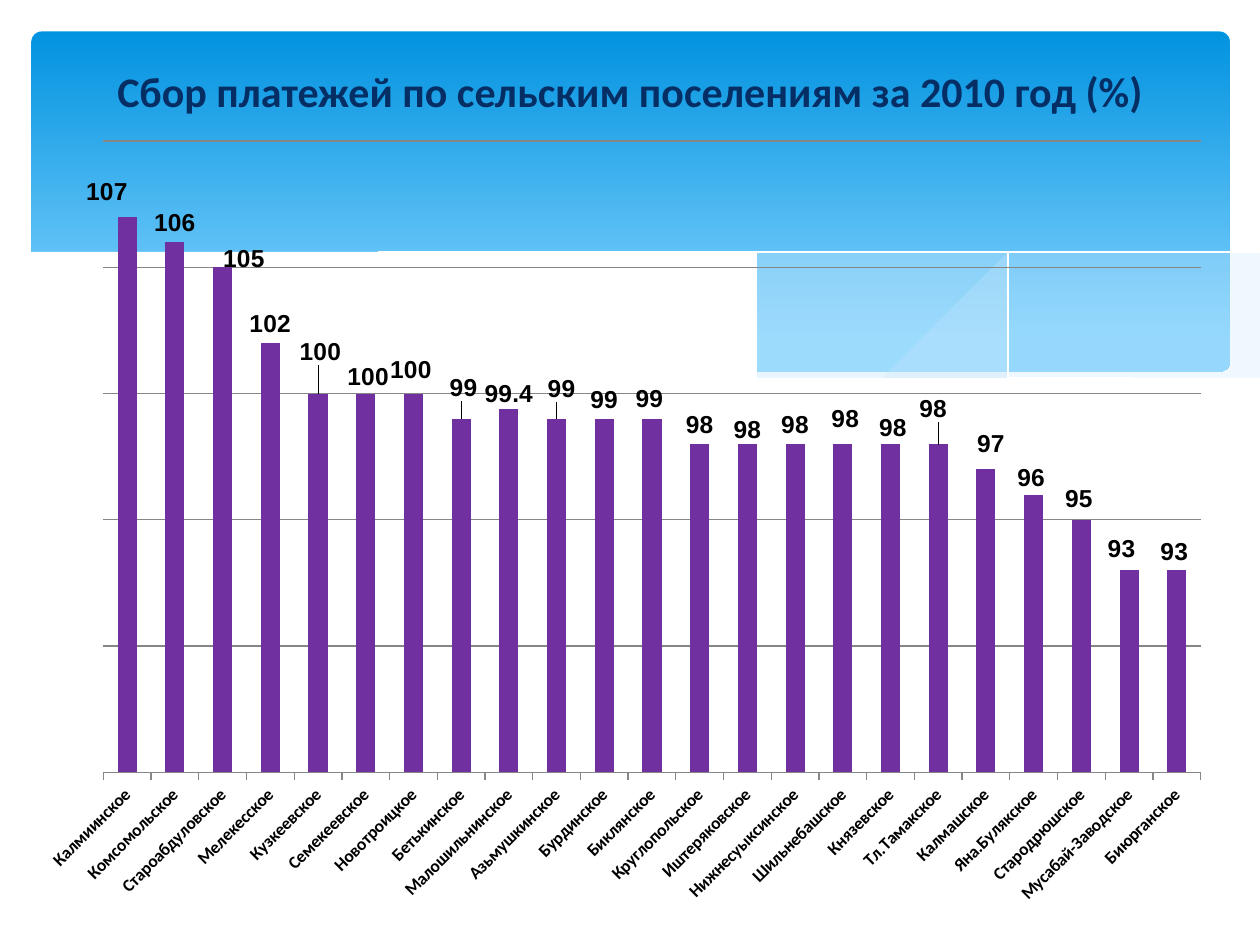
"""Build a slide with a column chart of payment collection by rural settlement."""
from lxml.etree import SubElement
from pptx import Presentation
from pptx.chart.data import CategoryChartData
from pptx.dml.color import RGBColor
from pptx.enum.chart import XL_CHART_TYPE, XL_LABEL_POSITION, XL_TICK_LABEL_POSITION, XL_TICK_MARK
from pptx.enum.shapes import MSO_SHAPE
from pptx.enum.text import MSO_ANCHOR, MSO_AUTO_SIZE, PP_ALIGN
from pptx.oxml import parse_xml
from pptx.oxml.ns import nsdecls, qn
from pptx.util import Inches, Pt

TITLE = "Сбор платежей по сельским поселениям за 2010 год (%)"
COLLECTION = [
    ("Калмиинское", 107), ("Комсомольское", 106), ("Староабдуловское", 105),
    ("Мелекесское", 102), ("Кузкеевское", 100), ("Семекеевское", 100),
    ("Новотроицкое", 100), ("Бетькинское", 99), ("Малошильнинское", 99.4),
    ("Азьмушкинское", 99), ("Бурдинское", 99), ("Биклянское", 99),
    ("Круглопольское", 98), ("Иштеряковское", 98), ("Нижнесуыксинское", 98),
    ("Шильнебашское", 98), ("Князевское", 98), ("Тл.Тамакское", 98),
    ("Калмашское", 97), ("Яна.Булякское", 96), ("Стародрюшское", 95),
    ("Мусабай-Заводское", 93), ("Биюрганское", 93),
]
LABEL_SHIFTS = {
    0: (-0.16, -0.05), 2: (0.17, 0.08), 4: (0.02, -0.18), 5: (0.02, 0.02),
    6: (-0.02, -0.04), 7: (0.02, -0.1), 8: (0, 0.03), 9: (0.04, -0.09),
    11: (-0.02, -0.01), 13: (0, 0.04), 15: (0.02, -0.05), 16: (0.02, 0.02),
    17: (-0.04, -0.13), 18: (0.04, -0.05), 19: (-0.02, 0.02), 20: (-0.02, -0.02),
    21: (-0.06, -0.02), 22: (-0.02, 0),
}
COLORS = {"sky": "0293E0", "haze": "83D3FE", "wave": "C6E7FC", "white": "FFFFFF",
          "title": "052E65", "bar": "7030A0", "text": "000000", "grid": "868686"}
CHART_BOX = (0.2, 0.99, 9.53, 6.3)
PLOT_BOX = (0.82, 1.12, 8.71, 5.01)

RIGHT_WAVE = [
    [(9.76, 1.99), (9.35, 2.07), (8.91, 2.16), (8.32, 2.3), (7.53, 2.48), (6.61, 2.65)],
    [(6.61, 2.65), (7.18, 2.72), (7.69, 2.77), (8.14, 2.78), (8.63, 2.75),
     (9.05, 2.69), (9.42, 2.59), (9.76, 2.47)],
]
LONG_WAVE = [
    [(8.93, 2.73), (8.37, 2.65), (7.75, 2.54), (7.06, 2.4), (6.29, 2.22), (5.69, 2.08),
     (5.14, 1.98), (4.65, 1.91), (4.2, 1.87), (3.8, 1.86), (3.28, 1.87), (2.86, 1.91)],
    [(2.86, 1.91), (3.42, 1.99), (4.04, 2.11), (4.49, 2.22), (5.3, 2.4), (6.01, 2.55),
     (6.65, 2.66), (7.22, 2.74), (7.73, 2.77), (8.18, 2.78), (8.57, 2.77), (8.93, 2.73)],
]
FALLING_LINE = [
    [(3.09, 1.95), (3.44, 1.9), (3.87, 1.87), (4.33, 1.87), (4.89, 1.9), (5.56, 1.97),
     (6.36, 2.08), (7.27, 2.26), (8.31, 2.51), (9.07, 2.72)],
]
RISING_LINE = [
    [(6.13, 2.57), (6.72, 2.41), (7.48, 2.23), (8.06, 2.1), (8.66, 1.99),
     (9.24, 1.9), (9.75, 1.85)],
]
WHITE_WAVE = [
    [(9.77, 2.46), (9.4, 2.59), (8.99, 2.69), (8.5, 2.75), (8.09, 2.77), (7.61, 2.75),
     (7.08, 2.7), (6.47, 2.62), (5.79, 2.5), (5.03, 2.33), (4.47, 2.2), (3.91, 2.07),
     (3.39, 1.97), (2.92, 1.91), (2.5, 1.86), (2.11, 1.84), (1.77, 1.84), (1.46, 1.85),
     (1.06, 1.89), (0.75, 1.95), (0.46, 2.03), (0.23, 2.13)],
    [(0.23, 3.29), (9.77, 3.29)],
]


def rgb(name):
    return RGBColor.from_string(COLORS[name])


def smooth_curve(anchors, steps=6):
    padded = [anchors[0], *anchors, anchors[-1]]
    points = [anchors[0]]
    for a, b, c, d in zip(padded, padded[1:], padded[2:], padded[3:]):
        for step in range(1, steps + 1):
            t = step / steps
            points.append(tuple(
                q + t * ((r - p) + t * ((2 * p - 5 * q + 4 * r - s) + t * (3 * (q - r) + s - p))) / 2
                for p, q, r, s in zip(a, b, c, d)))
    return points


def add_wave(slide, curves, color, opacity=100, filled=True):
    points = [point for curve in curves
              for point in (smooth_curve(curve) if len(curve) > 2 else curve)]
    builder = slide.shapes.build_freeform(*points[0], scale=Inches(1))
    builder.add_line_segments(points[1:], close=filled)
    wave = builder.convert_to_shape()
    wave.shadow.inherit = False
    if filled:
        wave.fill.solid()
        wave.fill.fore_color.rgb = rgb(color)
        wave.line.fill.background()
        srgb = wave.fill._xPr.find(".//" + qn("a:srgbClr"))
        SubElement(srgb, qn("a:alpha"), val=str(opacity * 1000))
    else:
        wave.fill.background()
        wave.line.color.rgb = rgb(color)
        wave.line.width = Pt(0)
    return wave


def add_backdrop(slide):
    sky = slide.shapes.add_shape(MSO_SHAPE.ROUNDED_RECTANGLE,
                                 *map(Inches, (0.25, 0.25, 9.51, 2.7)))
    sky.adjustments[0] = 0.03
    sky.shadow.inherit = False
    sky.line.fill.background()
    sky.fill.gradient()
    sky.fill.gradient_angle = 270
    for stop, color, position in zip(sky.fill.gradient_stops, ("sky", "haze"), (0, 0.9)):
        stop.color.rgb = rgb(color)
        stop.position = position
    add_wave(slide, RIGHT_WAVE, "wave", 29)
    add_wave(slide, LONG_WAVE, "wave", 40)
    for line in (FALLING_LINE, RISING_LINE):
        add_wave(slide, line, "white", filled=False)
    return add_wave(slide, WHITE_WAVE, "white")


def manual_layout(**settings):
    entries = "".join(f'<c:{key} val="{value}"/>' for key, value in settings.items())
    return parse_xml(f'<c:layout {nsdecls("c")}><c:manualLayout>{entries}'
                     '</c:manualLayout></c:layout>')


def style_font(font, size, bold, name):
    font.size, font.bold, font.name = Pt(size), bold, name
    font.color.rgb = rgb("text")


def style_labels(labels):
    style_font(labels.font, 14, True, "Arial")
    labels.position = XL_LABEL_POSITION.OUTSIDE_END


def add_collection_chart(slide):
    data = CategoryChartData()
    data.categories = [settlement for settlement, _ in COLLECTION]
    data.add_series("Series 1", [percent for _, percent in COLLECTION])
    chart = slide.shapes.add_chart(XL_CHART_TYPE.COLUMN_CLUSTERED,
                                   *map(Inches, CHART_BOX), data).chart
    chart.has_legend = False
    chart.has_title = False
    style_font(chart.font, 18, False, "Calibri")

    left, top, width, height = CHART_BOX
    x, y, w, h = PLOT_BOX
    plot_area = chart._chartSpace.chart.plotArea
    for old_layout in plot_area.findall(qn("c:layout")):
        plot_area.remove(old_layout)
    plot_area.insert(0, manual_layout(
        layoutTarget="inner", xMode="edge", yMode="edge", x=(x - left) / width,
        y=(y - top) / height, w=w / width, h=h / height))

    settlements, percents = chart.category_axis, chart.value_axis
    settlements.major_tick_mark = XL_TICK_MARK.OUTSIDE
    settlements.tick_label_position = XL_TICK_LABEL_POSITION.LOW
    settlements.format.line.color.rgb = rgb("grid")
    style_font(settlements.tick_labels.font, 10, True, "Calibri")
    settlements._element.find(qn("c:txPr")).find(qn("a:bodyPr")).set("rot", "-2700000")
    percents.minimum_scale, percents.maximum_scale, percents.major_unit = 85, 110, 5
    percents.visible = False
    percents.has_major_gridlines = True
    percents.major_gridlines.format.line.color.rgb = rgb("grid")

    plot = chart.plots[0]
    plot.gap_width = 150
    plot.vary_by_categories = False
    bars = plot.series[0]
    bars.format.fill.solid()
    bars.format.fill.fore_color.rgb = rgb("bar")
    style_labels(bars.data_labels)
    bars.data_labels.show_value = True
    for index, (dx, dy) in LABEL_SHIFTS.items():
        label = bars.points[index].data_label
        style_labels(label)
        label._dLbl.insert(1, manual_layout(x=dx / width, y=dy / height))


def main():
    deck = Presentation()
    deck.slide_width, deck.slide_height = Inches(10), Inches(7.5)
    slide = deck.slides.add_slide(deck.slide_layouts[5])
    title = slide.shapes.title
    add_backdrop(slide)._element.addnext(title._element)
    title.left, title.top, title.width, title.height = map(Inches, (0.5, 0.37, 9, 0.7))
    title.text_frame.text = TITLE
    title.text_frame.auto_size = MSO_AUTO_SIZE.NONE
    title.text_frame.vertical_anchor = MSO_ANCHOR.MIDDLE
    heading = title.text_frame.paragraphs[0]
    heading.alignment = PP_ALIGN.CENTER
    style_font(heading.font, 24, True, "Calibri")
    heading.font.color.rgb = rgb("title")
    add_collection_chart(slide)
    deck.save("out.pptx")


if __name__ == "__main__":
    main()
